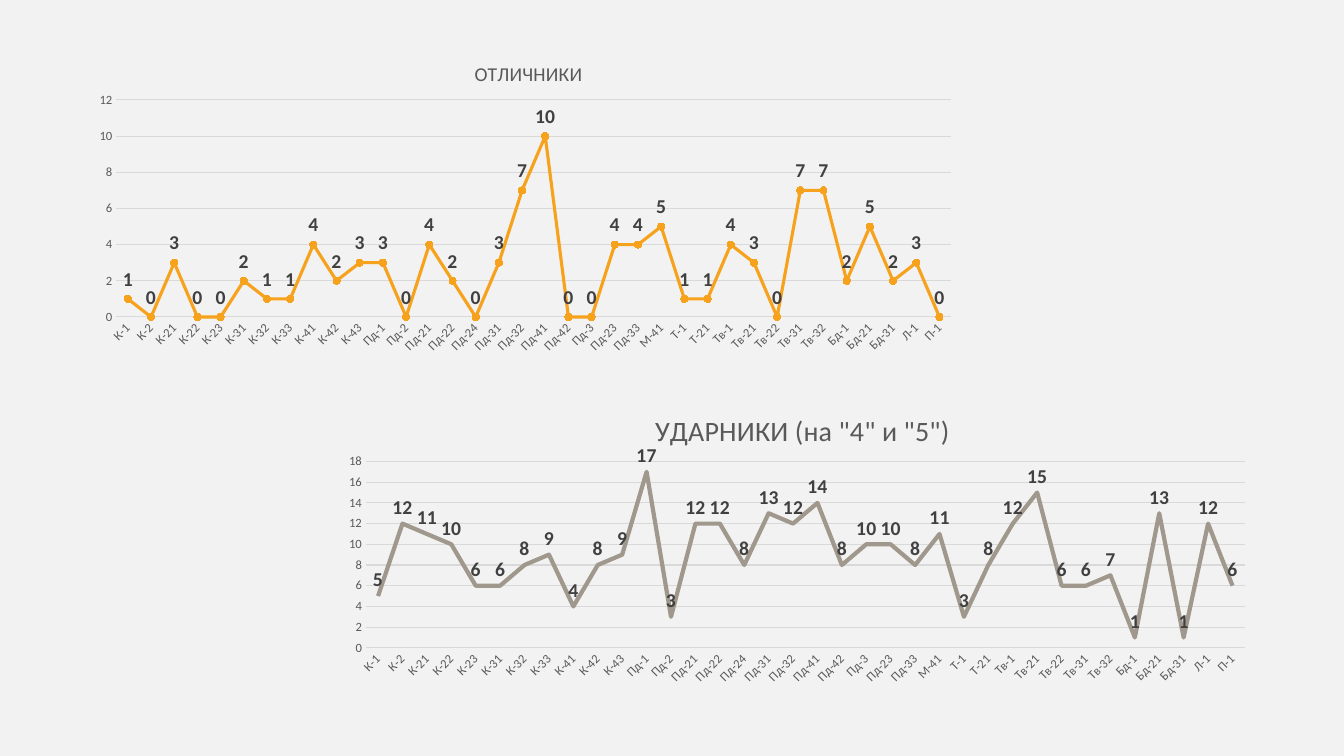
from lxml import etree
from pptx import Presentation
from pptx.chart.data import CategoryChartData
from pptx.dml.color import RGBColor
from pptx.enum.chart import XL_CHART_TYPE, XL_LABEL_POSITION, XL_MARKER_STYLE, XL_TICK_MARK
from pptx.oxml.ns import qn
from pptx.util import Cm, Pt

LINE = XL_CHART_TYPE.LINE
MARKED_LINE = XL_CHART_TYPE.LINE_MARKERS_STACKED
ABOVE = XL_LABEL_POSITION.ABOVE
CIRCLE = XL_MARKER_STYLE.CIRCLE
NO_MARKER = XL_MARKER_STYLE.NONE
NO_TICK = XL_TICK_MARK.NONE

FONT = "Calibri"
GROUPS = (
    "К-1 К-2 К-21 К-22 К-23 К-31 К-32 К-33 К-41 К-42 К-43 "
    "Пд-1 Пд-2 Пд-21 Пд-22 Пд-24 Пд-31 Пд-32 Пд-41 Пд-42 Пд-3 Пд-23 Пд-33 "
    "М-41 Т-1 Т-21 Тв-1 Тв-21 Тв-22 Тв-31 Тв-32 Бд-1 Бд-21 Бд-31 Л-1 П-1"
).split()
EXCELLENT = [1, 0, 3, 0, 0, 2, 1, 1, 4, 2, 3, 3, 0, 4, 2, 0, 3, 7,
             10, 0, 0, 4, 4, 5, 1, 1, 4, 3, 0, 7, 7, 2, 5, 2, 3, 0]
GOOD = [5, 12, 11, 10, 6, 6, 8, 9, 4, 8, 9, 17, 3, 12, 12, 8, 13, 12,
        14, 8, 10, 10, 8, 11, 3, 8, 12, 15, 6, 6, 7, 1, 13, 1, 12, 6]


def rgb(value):
    return RGBColor.from_string(value)


def set_font(font, size, color, bold=False):
    font.name = FONT
    font.size = Pt(size)
    font.bold = bold
    font.color.rgb = rgb(color)


def set_layout(parent, index, settings):
    old = parent.find(qn("c:layout"))
    if old is not None:
        parent.remove(old)
    layout = etree.Element(qn("c:layout"))
    manual = etree.SubElement(layout, qn("c:manualLayout"))
    for tag, value in settings.items():
        etree.SubElement(manual, qn("c:" + tag)).set("val", str(value))
    parent.insert(index, layout)


def add_title(chart, text, size, x, y):
    tf = chart.chart_title.text_frame
    r = tf.paragraphs[0].add_run()
    r.text = text
    set_font(r.font, size, "595959")
    set_layout(chart.chart_title._element, 1,
               {"xMode": "edge", "yMode": "edge", "x": x, "y": y})


def style_axes(chart, maximum):
    for axis in (chart.category_axis, chart.value_axis):
        axis.major_tick_mark = axis.minor_tick_mark = NO_TICK
        set_font(axis.tick_labels.font, 9, "595959")
    groups, values = chart.category_axis, chart.value_axis
    groups.format.line.color.rgb = rgb("D9D9D9")
    groups.format.line.width = Pt(0.75)
    groups._element.find(qn("c:txPr")).find(qn("a:bodyPr")).set("rot", "-2700000")
    values.minimum_scale, values.maximum_scale, values.major_unit = 0, maximum, 2
    values.format.line.fill.background()
    grid = values.major_gridlines.format.line
    grid.color.rgb = rgb("D9D9D9")
    grid.width = Pt(0.75)


def add_line_chart(s, box, plot_box, kind, title, title_size, title_at,
                   counts, maximum, color, width):
    data = CategoryChartData()
    data.categories = GROUPS
    data.add_series(title, counts)
    chart = s.shapes.add_chart(kind, *map(Cm, box), data).chart
    set_font(chart.font, 10, "000000")
    chart.has_legend = False
    box_w, box_h = box[2:]
    add_title(chart, title, title_size, title_at[0] / box_w, title_at[1] / box_h)
    style_axes(chart, maximum)

    x, y, w, h = plot_box
    set_layout(chart._chartSpace.chart.plotArea, 0, {
        "layoutTarget": "inner", "xMode": "edge", "yMode": "edge",
        "x": x / box_w, "y": y / box_h, "w": w / box_w, "h": h / box_h})

    plot = chart.plots[0]
    plot.vary_by_categories = False
    plot.has_data_labels = True
    labels = plot.data_labels
    labels.show_value = True
    labels.position = ABOVE
    set_font(labels.font, 14, "404040", True)

    line = plot.series[0]
    line.smooth = False
    line.format.line.color.rgb = rgb(color)
    line.format.line.width = Pt(width)
    if kind == MARKED_LINE:
        line.marker.style = CIRCLE
        line.marker.size = 5
        line.marker.format.fill.solid()
        line.marker.format.fill.fore_color.rgb = rgb(color)
        line.marker.format.line.color.rgb = rgb(color)
    else:
        line.marker.style = NO_MARKER


def main():
    prs = Presentation()
    prs.slide_width, prs.slide_height = Cm(33.87), Cm(19.05)
    s = prs.slides.add_slide(prs.slide_layouts[6])
    s.background.fill.solid()
    s.background.fill.fore_color.rgb = rgb("F2F2F2")
    add_line_chart(s, (2.06, 0.99, 22.38, 8.08), (0.87, 1.53, 21.04, 5.47),
                   MARKED_LINE, "ОТЛИЧНИКИ", 14, (9.81, 0.43),
                   EXCELLENT, 12, "F6A21D", 2.25)
    add_line_chart(s, (8.33, 9.7, 23.5, 7.7), (0.89, 1.93, 22.15, 4.7),
                   LINE, 'УДАРНИКИ (на "4" и "5")', 20, (8.05, 0.53),
                   GOOD, 18, "A0988C", 3)
    prs.save("out.pptx")


if __name__ == "__main__":
    main()
